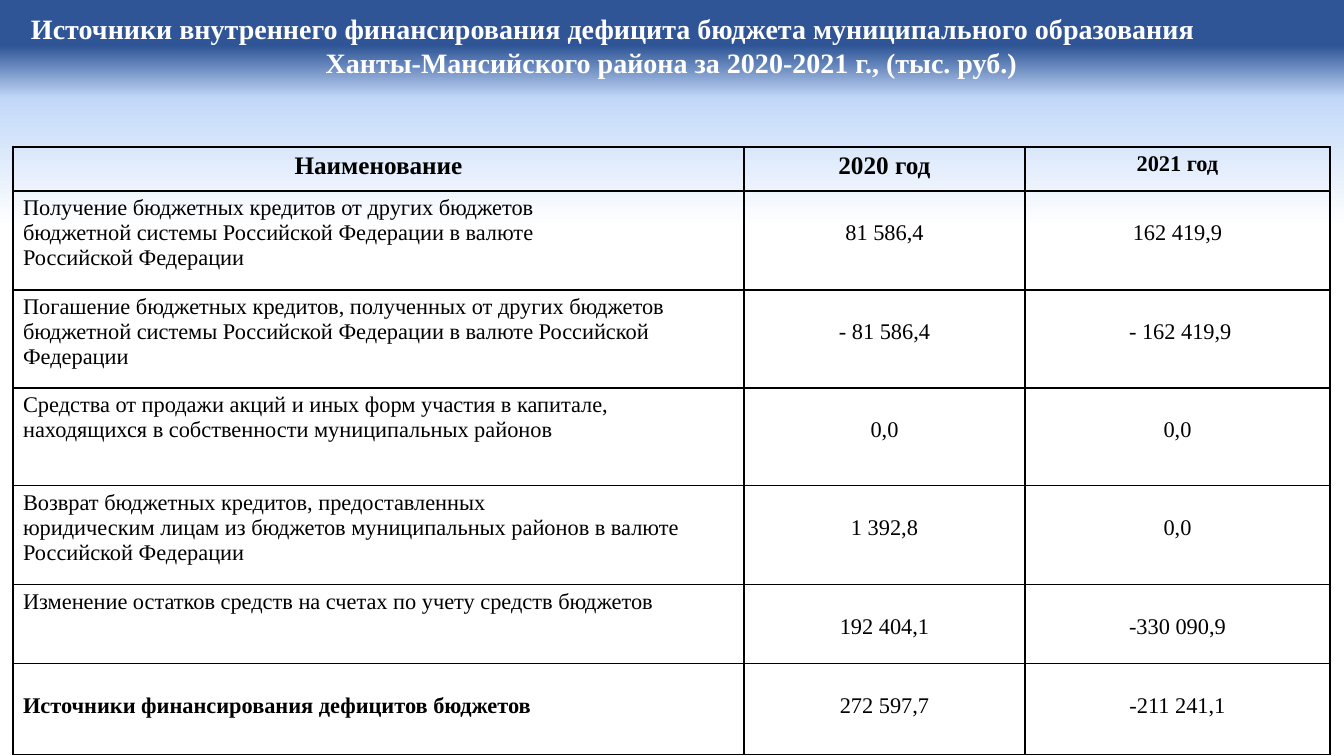
from copy import deepcopy
from lxml import etree
from pptx import Presentation
from pptx.dml.color import RGBColor
from pptx.enum.text import PP_ALIGN as Align
from pptx.oxml.ns import qn
from pptx.util import Emu, Pt

# Content
TITLE = [
    ("Источники внутреннего финансирования дефицита бюджета муниципального образования", Align.LEFT),
    ("Ханты-Мансийского района за 2020-2021 г., (тыс. руб.)", Align.CENTER),
]
HEADER = [("Наименование", 18), ("2020 год", 18), ("2021 год", 16)]
SOURCES = [
    (["Получение бюджетных кредитов от других бюджетов",
      "бюджетной системы Российской Федерации в валюте",
      "Российской Федерации"], "81 586,4", "162 419,9"),
    (["Погашение бюджетных кредитов, полученных от других бюджетов бюджетной системы "
      "Российской Федерации в валюте Российской Федерации"], "- 81 586,4", " - 162 419,9"),
    (["Средства от продажи акций и иных форм участия в капитале, "
      "находящихся в собственности муниципальных районов"], "0,0", "0,0"),
    (["Возврат бюджетных кредитов, предоставленных",
      "юридическим лицам из бюджетов муниципальных районов в валюте Российской Федерации"],
     "1 392,8", "0,0"),
    (["Изменение остатков средств на счетах по учету средств бюджетов"], "192 404,1", "-330 090,9"),
    (["Источники финансирования дефицитов бюджетов"], "272 597,7", "-211 241,1"),
]

# Layout in px
SLIDE_W, SLIDE_H = 1344, 756
LEFT, WIDTH = 13, 1317
TITLE_TOP, TITLE_H, TITLE_INSET = 7, 77, 18
TABLE_TOP = 147
COLS = [731, 281, 305]
ROWS = [44, 99, 98, 98, 99, 79, 91]
CELL_TOP, LINE_H = 5, 25
GRADIENT = [(0.06, "2F5597"), (0.13, "C2D8F8"), (0.30, "FFFFFF")]
BLACK, WHITE = "000000", "FFFFFF"


def px(n):
    return Emu(round(n * 914400 / 100.8))


def rgb(value):
    return RGBColor.from_string(value)


def write(p, text, align, size, bold=False, color=BLACK):
    p.alignment = align
    r = p.add_run()
    r.text = text
    for name, value in dict(name="Times New Roman", size=Pt(size), bold=bold).items():
        setattr(r.font, name, value)
    r.font.color.rgb = rgb(color)


def add_borders(cell):
    tc_pr = cell._tc.get_or_add_tcPr()
    for side in ("lnL", "lnR", "lnT", "lnB"):
        ln = etree.SubElement(tc_pr, qn("a:" + side), w=str(Pt(1)))
        fill = etree.SubElement(ln, qn("a:solidFill"))
        etree.SubElement(fill, qn("a:srgbClr"), val=BLACK)


def fill_cell(cell, lines, align, size, bold, top):
    add_borders(cell)
    cell.fill.background()
    cell.margin_top = px(top)
    tf = cell.text_frame
    for i, line in enumerate(lines):
        p = tf.add_paragraph() if i else tf.paragraphs[0]
        write(p, line, align, size, bold)


prs = Presentation()
prs.slide_width, prs.slide_height = px(SLIDE_W), px(SLIDE_H)
s = prs.slides.add_slide(prs.slide_layouts[6])

# Background gradient, top to bottom
bg = s.background.fill
bg.gradient()
bg.gradient_angle = 270
stops = s._element.xpath(".//a:gsLst")[0]
stops.append(deepcopy(stops[-1]))
for stop, (position, color) in zip(bg.gradient_stops, GRADIENT):
    stop.position = position
    stop.color.rgb = rgb(color)

# Title
tf = s.shapes.add_textbox(px(LEFT), px(TITLE_TOP), px(WIDTH), px(TITLE_H)).text_frame
tf.word_wrap = True
tf.margin_left = tf.margin_right = px(TITLE_INSET)
for i, (text, align) in enumerate(TITLE):
    p = tf.add_paragraph() if i else tf.paragraphs[0]
    write(p, text, align, 20, True, WHITE)

# Table grid
table = s.shapes.add_table(len(ROWS), len(COLS), px(LEFT), px(TABLE_TOP),
                           px(WIDTH), px(sum(ROWS))).table
table.first_row = table.horz_banding = False
for column, width in zip(table.columns, COLS):
    column.width = px(width)
for row, height in zip(table.rows, ROWS):
    row.height = px(height)

# Header row
for c, (text, size) in enumerate(HEADER):
    fill_cell(table.cell(0, c), [text], Align.CENTER, size, True, CELL_TOP)

# Sources: amounts sit one line lower, as does the total's name
for i, (name, *amounts) in enumerate(SOURCES, 1):
    total = i == len(SOURCES)
    fill_cell(table.cell(i, 0), name, Align.LEFT, 16, total, CELL_TOP + LINE_H * total)
    for c, amount in enumerate(amounts, 1):
        fill_cell(table.cell(i, c), [amount], Align.CENTER, 16, False, CELL_TOP + LINE_H)

prs.save("out.pptx")
